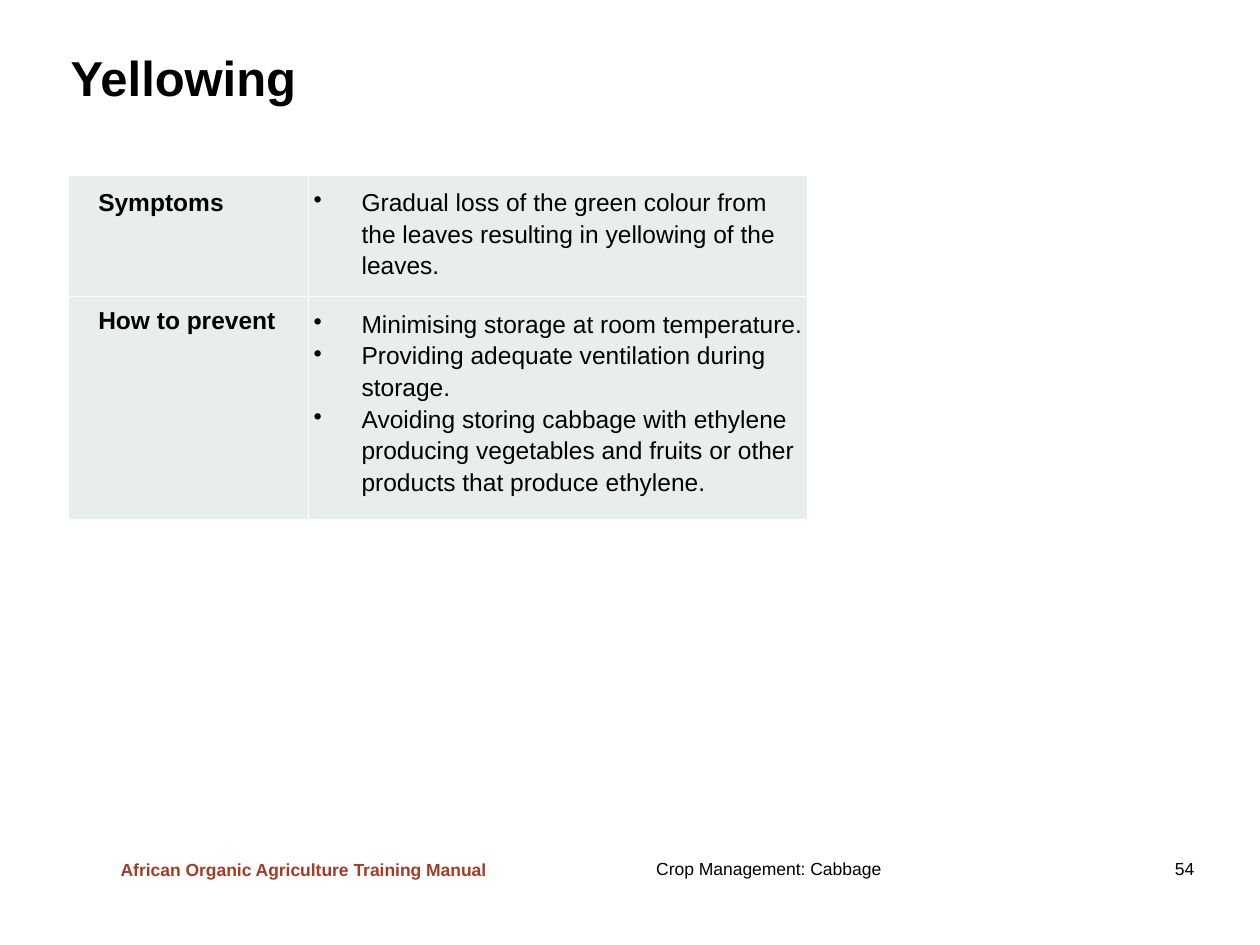
from dataclasses import dataclass

from lxml import etree
from pptx import Presentation
from pptx.dml.color import RGBColor
from pptx.enum.text import MSO_ANCHOR
from pptx.oxml.ns import qn
from pptx.util import Inches, Pt

MIDDLE = MSO_ANCHOR.MIDDLE


@dataclass(frozen=True)
class Theme:
    font: str = "Arial"
    ink: str = "000000"
    rust: str = "A23D25"
    cell: str = "E7EEED"
    rule: str = "FFFFFF"
    title: int = 28
    body: int = 14
    foot: int = 10


THEME = Theme()

ROWS = [
    ("Symptoms", 0.9, 1.15, [
        "Gradual loss of the green colour from the leaves resulting in "
        "yellowing of the leaves.",
    ]),
    ("How to prevent", 1.66, 1.0, [
        "Minimising storage at room temperature.",
        "Providing adequate ventilation during storage.",
        "Avoiding storing cabbage with ethylene producing vegetables and "
        "fruits or other products that produce ethylene.",
    ]),
]


def style(para, size, color=THEME.ink, bold=False):
    font = para.font
    font.name = THEME.font
    font.size = Pt(size)
    font.bold = bold
    font.color.rgb = RGBColor.from_string(color)


def indent(para, left, first=0):
    props = para._p.get_or_add_pPr()
    props.set("marL", str(Inches(left)))
    props.set("indent", str(Inches(first)))
    return props


def add_text(slide, text, box, size, color=THEME.ink, bold=False,
             inset=(0.1, 0.05, 0.1, 0.05), wrap=True, tab=None):
    frame = slide.shapes.add_textbox(*map(Inches, box)).text_frame
    frame.word_wrap = wrap
    frame.vertical_anchor = MIDDLE
    (frame.margin_left, frame.margin_top,
     frame.margin_right, frame.margin_bottom) = map(Inches, inset)
    para = frame.paragraphs[0]
    para.text = text
    if tab:
        stops = etree.SubElement(para._p.get_or_add_pPr(), qn("a:tabLst"))
        etree.SubElement(stops, qn("a:tab"), pos=str(Inches(tab)), algn="r")
    style(para, size, color, bold)


def dress(cell):
    cell.margin_left = cell.margin_right = Inches(0.04)
    cell.margin_top = cell.margin_bottom = Inches(0.08)
    # Borders come before the fill in the cell properties
    props = cell._tc.get_or_add_tcPr()
    for side in ("lnL", "lnR", "lnT", "lnB"):
        line = etree.SubElement(props, qn(f"a:{side}"), w=str(Pt(1)))
        fill = etree.SubElement(line, qn("a:solidFill"))
        etree.SubElement(fill, qn("a:srgbClr"), val=THEME.rule)
    cell.fill.solid()
    cell.fill.fore_color.rgb = RGBColor.from_string(THEME.cell)


def add_label(cell, text, space):
    dress(cell)
    para = cell.text_frame.paragraphs[0]
    para.text = text
    indent(para, 0.2)
    para.line_spacing = space
    style(para, THEME.body, bold=True)


def add_points(cell, points):
    dress(cell)
    frame = cell.text_frame
    for i, text in enumerate(points):
        para = frame.add_paragraph() if i else frame.paragraphs[0]
        para.text = text
        props = indent(para, 0.38, -0.38)
        etree.SubElement(props, qn("a:buChar"), char="•")
        para.line_spacing = 1.15
        style(para, THEME.body)


def add_grid(slide):
    widths = (1.91, 3.96)
    height = sum(row[1] for row in ROWS)
    table = slide.shapes.add_table(
        len(ROWS), len(widths), Inches(0.54), Inches(1.39),
        Inches(sum(widths)), Inches(height)).table
    table.first_row = table.horz_banding = False
    for col, width in zip(table.columns, widths):
        col.width = Inches(width)
    for i, (label, tall, space, points) in enumerate(ROWS):
        table.rows[i].height = Inches(tall)
        add_label(table.cell(i, 0), label, space)
        add_points(table.cell(i, 1), points)


def main():
    deck = Presentation()
    deck.slide_width, deck.slide_height = Inches(10), Inches(7.5)
    slide = deck.slides.add_slide(deck.slide_layouts[6])

    # Footer
    add_text(slide, "Crop Management: Cabbage\t54", (5.11, 6.76, 4.81, 0.27),
             THEME.foot, tab=4.27)
    add_text(slide, "African Organic Agriculture Training Manual",
             (0.86, 6.77, 3.14, 0.27), THEME.foot, THEME.rust, True,
             wrap=False)

    # Title and table
    add_text(slide, "Yellowing", (0.56, 0.36, 9.02, 0.55), THEME.title,
             bold=True, inset=(0, 0, 0.1, 0.05))
    add_grid(slide)

    deck.save("out.pptx")


if __name__ == "__main__":
    main()
